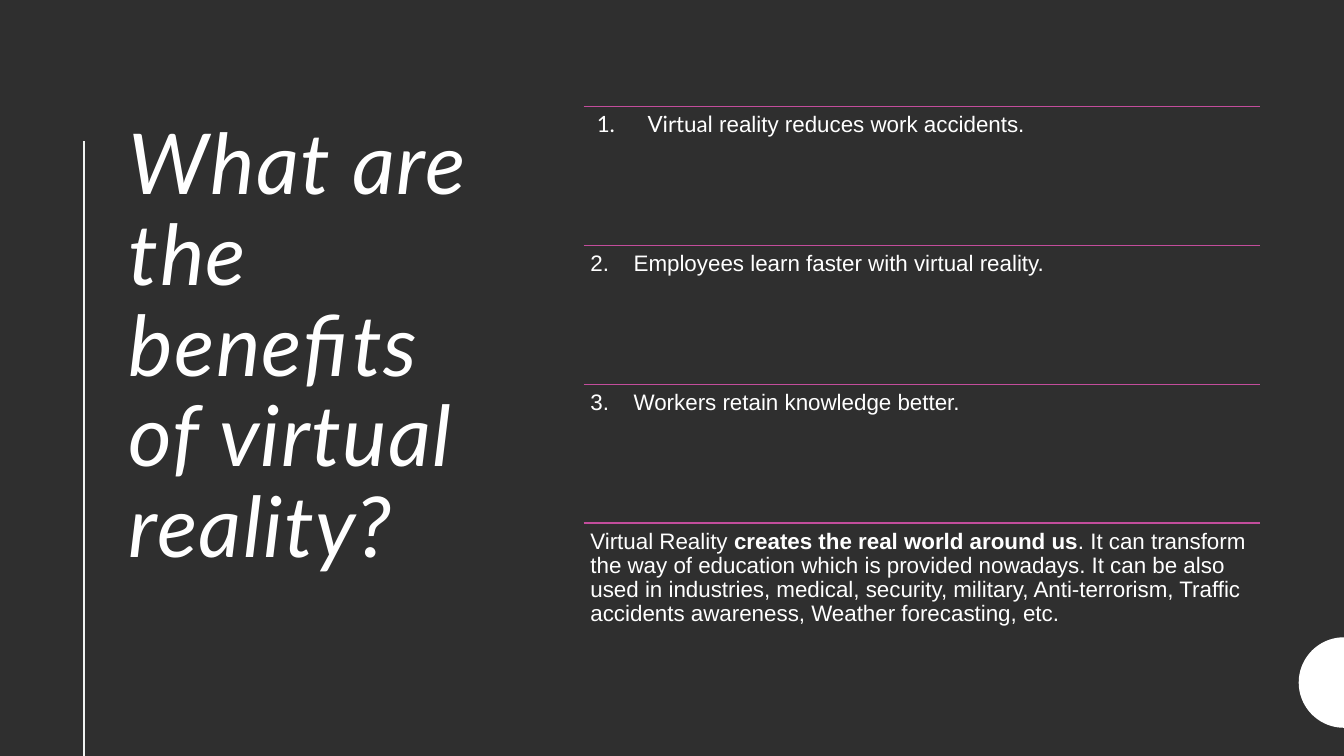
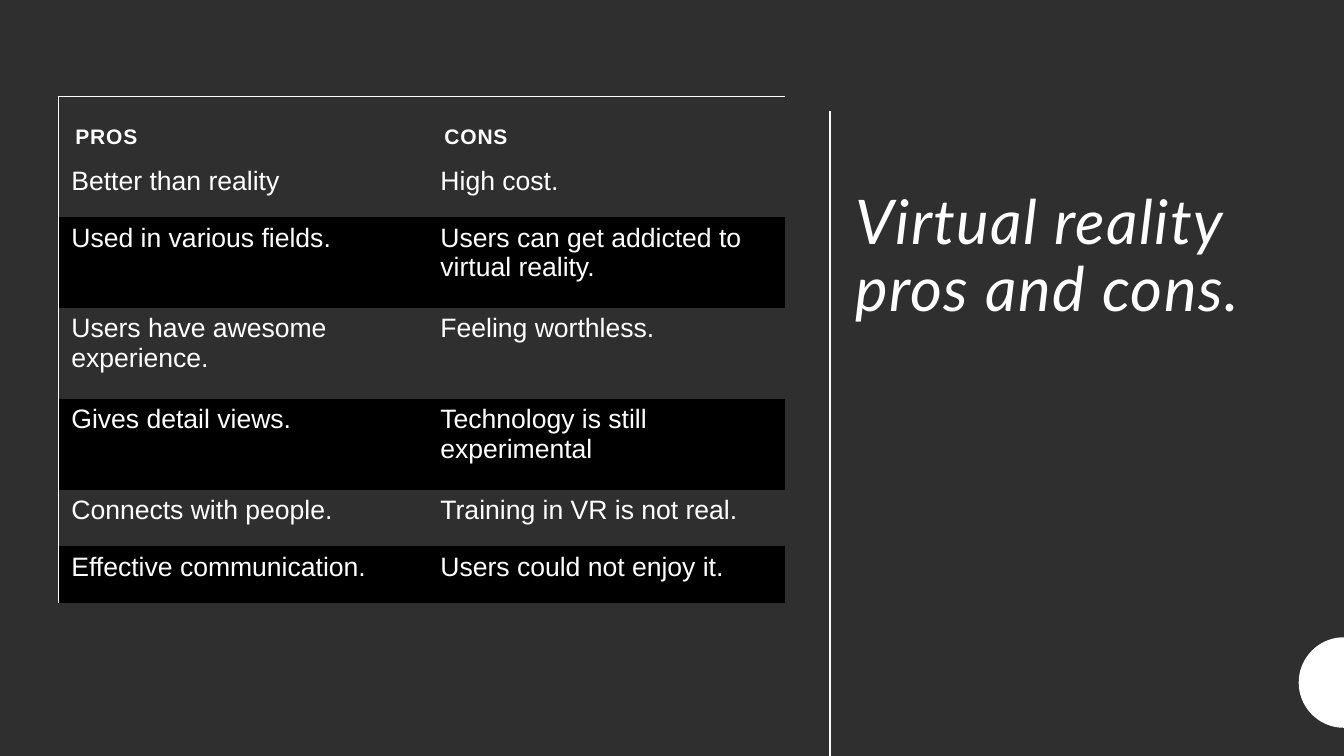
from math import cos, pi, sin

from lxml.etree import SubElement as Sub
from pptx import Presentation
from pptx.dml.color import RGBColor
from pptx.enum.shapes import MSO_CONNECTOR as Link
from pptx.enum.text import MSO_ANCHOR as Anchor
from pptx.oxml.ns import qn
from pptx.util import Cm, Pt

COLORS = {"back": "2F2F2F", "text": "FFFFFF", "pale": "F0F3F1",
          "rule": "C34D9C", "band": "000000"}
HEAD, BODY = "Lato", "Arial"
WIDE, HIGH = 33.87, 19.05

# Each item: indent of the number, indent of the text, number, runs (text, font, bold)
ITEMS = [
    (0.16, 1.44, 1, [("Virtual", HEAD, False),
                     (" reality reduces work accidents.", BODY, False)]),
    (0, 1.09, 2, [("Employees learn faster with virtual reality.", BODY, False)]),
    (0, 1.09, 3, [("Workers retain knowledge better.", BODY, False)]),
    (0, 0, None, [
        ("Virtual Reality ", BODY, False),
        ("creates the real world around us", BODY, True),
        (". It can transform the way of education which is provided nowadays. "
         "It can be also used in industries, medical, security, military, "
         "Anti-terrorism, Traffic accidents awareness, Weather forecasting, etc.",
         BODY, False)]),
]

ROWS = [
    ("PROS", "CONS"),
    ("Better than reality", "High cost."),
    ("Used in various fields.", "Users can get addicted to virtual reality."),
    ("Users have awesome experience.", "Feeling worthless."),
    ("Gives detail views.", "Technology is still experimental"),
    ("Connects with people.", "Training in VR is not real."),
    ("Effective communication.", "Users could not enjoy it."),
]
HEIGHTS = [1.6, 1.43, 2.29, 2.29, 2.29, 1.43, 1.43]


def color(name):
    return RGBColor.from_string(COLORS[name])


def style(para, size, name=BODY, bold=False, italic=False, gap=0):
    """Set the font of a paragraph; gap is the letter spacing in points."""
    font = para.font
    font.size, font.name, font.bold, font.italic = Pt(size), name, bold, italic
    font.color.rgb = color("text")
    if gap:
        para._p.pPr.find(qn("a:defRPr")).set("spc", str(round(gap * 100)))


def inset(part, left, top, right, low):
    part.margin_left, part.margin_top = Cm(left), Cm(top)
    part.margin_right, part.margin_bottom = Cm(right), Cm(low)


def add_text(slide, x, y, w, h):
    frame = slide.shapes.add_textbox(Cm(x), Cm(y), Cm(w), Cm(h)).text_frame
    frame.word_wrap = True
    return frame


def add_line(slide, x1, y1, x2, y2, tint, width):
    line = slide.shapes.add_connector(Link.STRAIGHT, Cm(x1), Cm(y1), Cm(x2), Cm(y2))
    line.line.color.rgb = color(tint)
    line.line.width = Pt(width)
    Sub(line._element.spPr, qn("a:effectLst"))


def add_dome(slide, mid=17.2, size=1.14, steps=48):
    """Draw the half disc on the right edge of the slide."""
    turns = [pi / 2 + pi * i / steps for i in range(steps + 1)]
    dots = [(Cm(WIDE + size * cos(t)), Cm(mid + size * sin(t))) for t in turns]
    path = slide.shapes.build_freeform(*dots[0])
    path.add_line_segments(dots[1:], close=True)
    dome = path.convert_to_shape()
    dome.shadow.inherit = False
    dome.fill.solid()
    dome.fill.fore_color.rgb = color("text")
    dome.line.fill.background()


def add_title(slide, text, x, y, w, h, size, anchor):
    frame = add_text(slide, x, y, w, h)
    frame.vertical_anchor = anchor
    para = frame.paragraphs[0]
    para.text = text
    para.line_spacing = 0.9
    style(para, size, HEAD, italic=True, gap=1)


def add_slide(deck):
    slide = deck.slides.add_slide(deck.slide_layouts[6])
    slide.background.fill.solid()
    slide.background.fill.fore_color.rgb = color("back")
    add_dome(slide)
    return slide


def number(para, start, left, right, font):
    """Number a paragraph, with the number at left and its text at right."""
    props = para._p.get_or_add_pPr()
    props.set("marL", str(Cm(right)))
    props.set("indent", str(Cm(left) - Cm(right)))
    Sub(props, qn("a:buFont"), typeface=font)
    Sub(props, qn("a:buAutoNum"), type="arabicPeriod", startAt=str(start))


def add_list(slide, x, y, w, h):
    step = h / len(ITEMS)
    for i, (left, right, start, runs) in enumerate(ITEMS):
        top = y + i * step
        add_line(slide, x, top, x + w, top, "rule", 1)
        frame = add_text(slide, x, top, w, step)
        inset(frame, 0.17, 0.17, 0.17, 0.17)
        para = frame.paragraphs[0]
        if start:
            number(para, start, left, right, runs[0][1])
        para.line_spacing = 0.9
        style(para, 16)
        for text, name, bold in runs:
            run = para.add_run()
            run.text = text
            if name != BODY:
                run.font.name = name
            if bold:
                run.font.bold = True


def edge(cell, sides):
    """Draw the named sides of a cell and clear the others."""
    props = cell._tc.get_or_add_tcPr()
    for i, side in enumerate("LRTB"):
        line = Sub(props, qn("a:ln" + side), w=str(Pt(1)))
        if side in sides:
            fill = Sub(line, qn("a:solidFill"))
            Sub(fill, qn("a:srgbClr"), val=COLORS["text"])
        else:
            Sub(line, qn("a:noFill"))
        props.insert(i, line)


def fill_cell(cell, text, row, col):
    head = row == 0
    cell.text = text
    if head:
        cell.vertical_anchor = Anchor.BOTTOM
        inset(cell, 0.43, 0.3, 0.43, 0.3)
        style(cell.text_frame.paragraphs[0], 15, bold=True, gap=0.6)
    else:
        inset(cell, 0.33, 0.15, 0.33, 0.3)
        style(cell.text_frame.paragraphs[0], 19)
    if row and row % 2 == 0:
        cell.fill.solid()
        cell.fill.fore_color.rgb = color("band")
    else:
        cell.fill.background()
    edge(cell, ("L" if col == 0 else "") + ("T" if head else ""))


def add_grid(slide, x, y, widths):
    frame = slide.shapes.add_table(len(ROWS), len(widths), Cm(x), Cm(y),
                                   Cm(sum(widths)), Cm(sum(HEIGHTS)))
    table = frame.table
    table.first_row = table.horz_banding = False
    for col, width in zip(table.columns, widths):
        col.width = Cm(width)
    for r, (texts, height) in enumerate(zip(ROWS, HEIGHTS)):
        table.rows[r].height = Cm(height)
        for c, text in enumerate(texts):
            fill_cell(table.cell(r, c), text, r, c)


def add_gains(deck):
    slide = add_slide(deck)
    add_title(slide, "What are the benefits of virtual reality?",
              3, 2.95, 9.93, 13.36, 60, Anchor.TOP)
    add_line(slide, 2.12, 3.56, 2.12, HIGH, "pale", 1.5)
    add_list(slide, 14.71, 2.69, 17.04, 13.99)


def add_pros(deck):
    slide = add_slide(deck)
    add_title(slide, "Virtual reality pros and cons.",
              21.31, 3.15, 12.06, 6.7, 44, Anchor.MIDDLE)
    add_line(slide, 20.92, 2.8, 20.92, HIGH, "text", 1.5)
    add_grid(slide, 1.47, 2.44, [9.3, 9.02])


def main():
    deck = Presentation()
    deck.slide_width, deck.slide_height = Cm(WIDE), Cm(HIGH)
    add_gains(deck)
    add_pros(deck)
    deck.save("out.pptx")


if __name__ == "__main__":
    main()
